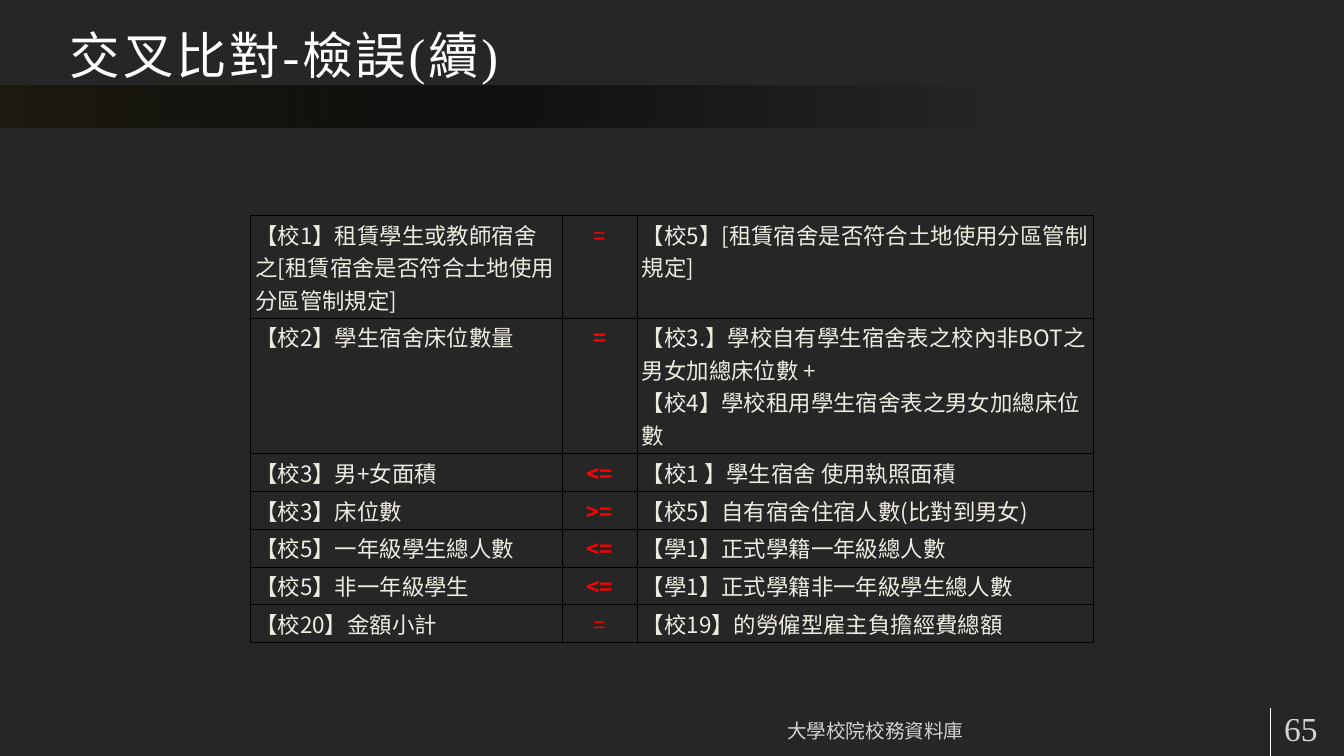
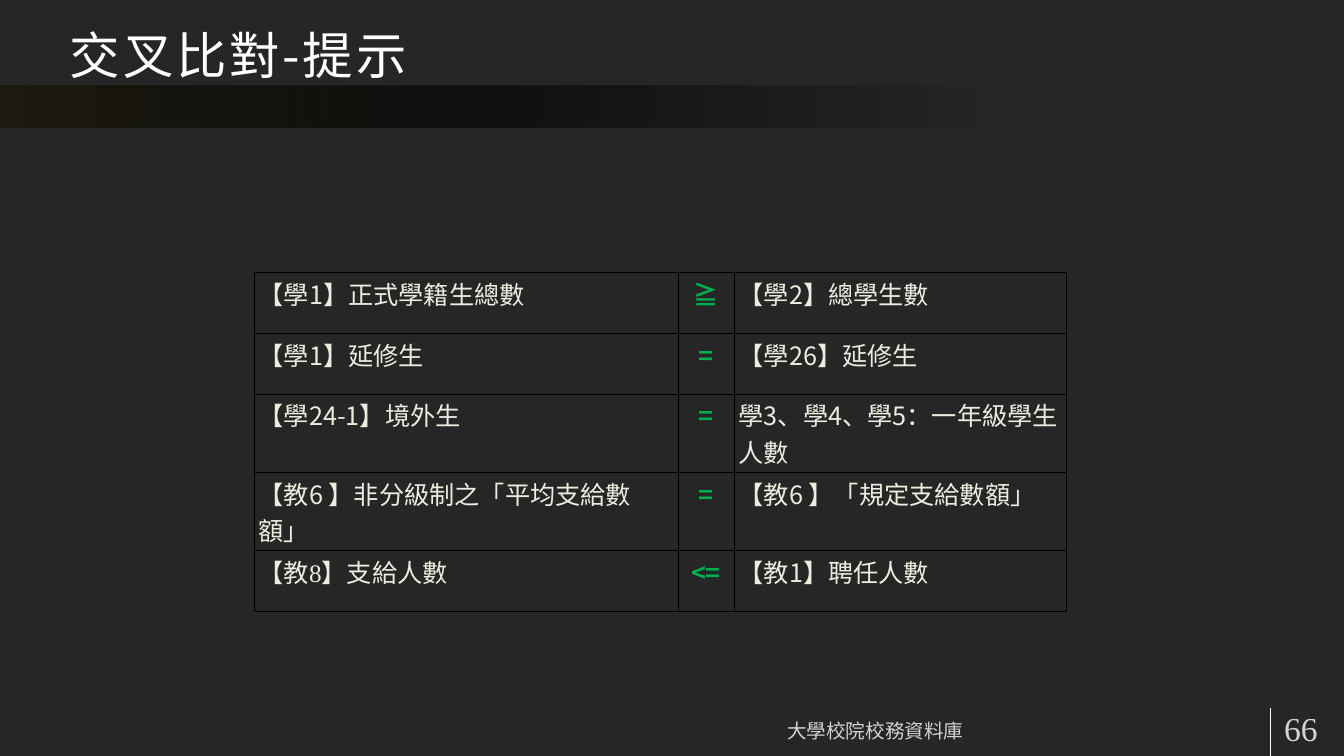
from dataclasses import dataclass

from lxml.etree import SubElement
from pptx import Presentation
from pptx.dml.color import RGBColor
from pptx.enum.shapes import MSO_CONNECTOR, MSO_SHAPE
from pptx.enum.text import MSO_ANCHOR, MSO_AUTO_SIZE, PP_ALIGN
from pptx.oxml import parse_xml
from pptx.oxml.ns import nsdecls, qn
from pptx.util import Cm, Pt


@dataclass(frozen=True)
class Theme:
    background: str = "262626"
    white: str = "FFFFFF"
    cell_text: str = "EEECE1"
    border: str = "000000"
    error: str = "FF0000"
    hint: str = "00B050"
    # Position, colour and opacity, all in percent
    band_stops: tuple = ((0, "1E1C11", 100), (39, "000000", 54), (74, "000000", 0))
    muted_opacity: int = 80
    serif: str = "Times New Roman"
    sans: str = "Noto Sans CJK SC"
    title_size: int = 54
    footer_size: int = 21
    number_size: int = 36
    error_size: int = 24
    hint_size: int = 27
    line_width: float = 0.75


FOOTER = "大學校院校務資料庫"
FIRST_NUMBER = 65

ERROR_ROWS = [
    ("【校1】租賃學生或教師宿舍之[租賃宿舍是否符合土地使用分區管制規定]", "=",
     "【校5】[租賃宿舍是否符合土地使用分區管制規定]"),
    ("【校2】學生宿舍床位數量", "=",
     "【校3.】學校自有學生宿舍表之校內非BOT之男女加總床位數 +\n"
     "【校4】學校租用學生宿舍表之男女加總床位數"),
    ("【校3】男+女面積", "<=", "【校1 】學生宿舍 使用執照面積"),
    ("【校3】床位數", ">=", "【校5】自有宿舍住宿人數(比對到男女)"),
    ("【校5】一年級學生總人數", "<=", "【學1】正式學籍一年級總人數"),
    ("【校5】非一年級學生", "<=", "【學1】正式學籍非一年級學生總人數"),
    ("【校20】金額小計", "=", "【校19】的勞僱型雇主負擔經費總額"),
]

HINT_ROWS = [
    ("【學1】正式學籍生總數", "≧", "【學2】總學生數"),
    ("【學1】延修生", "=", "【學26】延修生"),
    ("【學24-1】境外生", "=", "學3、學4、學5：一年級學生人數"),
    ("【教6 】非分級制之「平均支給數額」", "=", "【教6 】「規定支給數額」"),
    ("【教8】支給人數", "<=", "【教1】聘任人數"),
]


def write_text(text_frame, text, *, size, font, color, bold=False, opacity=100,
               spacing=0, align=PP_ALIGN.LEFT):
    for index, line in enumerate(text.split("\n")):
        paragraph = text_frame.add_paragraph() if index else text_frame.paragraphs[0]
        paragraph.alignment = align
        run = paragraph.add_run()
        run.text = line
        run.font.size = Pt(size)
        run.font.bold = bold
        run.font.color.rgb = RGBColor.from_string(color)
        run.font.name = font
        properties = run.font._element
        SubElement(properties, qn("a:ea")).set("typeface", Theme.sans)
        if spacing:
            properties.set("spc", str(spacing * 100))
        if opacity < 100:
            color_element = properties.find(".//" + qn("a:srgbClr"))
            SubElement(color_element, qn("a:alpha")).set("val", str(opacity * 1000))


def set_frame(text_frame, anchor):
    text_frame.word_wrap = True
    text_frame.auto_size = MSO_AUTO_SIZE.NONE
    text_frame.vertical_anchor = anchor
    text_frame.margin_left = text_frame.margin_right = Cm(0.46)
    text_frame.margin_top = text_frame.margin_bottom = Cm(0.23)


class Deck:
    def __init__(self, theme):
        self.theme = theme
        self.presentation = Presentation()
        self.presentation.slide_width = Cm(50.8)
        self.presentation.slide_height = Cm(28.58)
        self.slide = None

    def add_slide(self, title, title_font):
        presentation = self.presentation
        self.slide = presentation.slides.add_slide(presentation.slide_layouts[5])
        if len(presentation.slides) == 1:
            self.style_master()
        self.add_title(title, title_font)
        self.add_footer(FIRST_NUMBER + len(presentation.slides) - 1)

    def style_master(self):
        """Set the background, band and footer rule that every slide inherits."""
        master = self.presentation.slide_master
        fill = master.background.fill
        fill.solid()
        fill.fore_color.rgb = RGBColor.from_string(self.theme.background)
        for shape in (self.add_band(), self.add_rule()):
            master.shapes._spTree.append(shape._element)

    def add_band(self):
        band = self.slide.shapes.add_shape(
            MSO_SHAPE.RECTANGLE, Cm(0), Cm(3.23), Cm(50.8), Cm(1.6))
        band.shadow.inherit = False
        band.line.fill.background()
        stops = "".join(
            f'<a:gs pos="{position * 1000}"><a:srgbClr val="{color}">'
            f'<a:alpha val="{opacity * 1000}"/></a:srgbClr></a:gs>'
            for position, color, opacity in self.theme.band_stops)
        geometry = band._element.spPr.find(qn("a:prstGeom"))
        geometry.addnext(parse_xml(
            f'<a:gradFill {nsdecls("a")} rotWithShape="1"><a:gsLst>{stops}</a:gsLst>'
            '<a:lin ang="0" scaled="0"/></a:gradFill>'))
        return band

    def add_rule(self):
        rule = self.slide.shapes.add_connector(
            MSO_CONNECTOR.STRAIGHT, Cm(48.01), Cm(26.77), Cm(48.01), Cm(28.58))
        rule.line.color.rgb = RGBColor.from_string(self.theme.white)
        rule.line.width = Pt(self.theme.line_width)
        SubElement(rule._element.spPr, qn("a:effectLst"))
        return rule

    def add_title(self, text, font):
        title = self.slide.shapes.title
        title.left, title.top = Cm(2.18), Cm(0)
        title.width, title.height = Cm(45.72), Cm(3.43)
        set_frame(title.text_frame, MSO_ANCHOR.BOTTOM)
        write_text(title.text_frame, text, size=self.theme.title_size, font=font,
                   color=self.theme.white, spacing=3)

    def add_text(self, text, left, width, anchor, **text_format):
        box = self.slide.shapes.add_textbox(Cm(left), Cm(26.77), Cm(width), Cm(1.52))
        set_frame(box.text_frame, anchor)
        write_text(box.text_frame, text, font=self.theme.serif, color=self.theme.white,
                   opacity=self.theme.muted_opacity, **text_format)

    def add_footer(self, number):
        self.add_text(FOOTER, 18.19, 29.79, MSO_ANCHOR.BOTTOM,
                      size=self.theme.footer_size, align=PP_ALIGN.CENTER)
        self.add_text(str(number), 48.08, 2.92, MSO_ANCHOR.MIDDLE,
                      size=self.theme.number_size)

    def add_comparison(self, rows, left, top, widths, heights, size, sign_color,
                       plain_signs=(), serif_cells=()):
        """Add a table of left side, comparison sign and right side."""
        frame = self.slide.shapes.add_table(
            len(rows), len(widths), Cm(left), Cm(top), Cm(sum(widths)), Cm(sum(heights)))
        table = frame.table
        table.first_row = table.horz_banding = False
        for column, width in zip(table.columns, widths):
            column.width = Cm(width)
        for row, height in zip(table.rows, heights):
            row.height = Cm(height)
        for row_index, texts in enumerate(rows):
            for column_index, text in enumerate(texts):
                is_sign = column_index == 1
                is_serif = (row_index, column_index) in serif_cells
                cell = table.cell(row_index, column_index)
                self.style_cell(cell)
                write_text(
                    cell.text_frame, text, size=size,
                    font=self.theme.serif if is_serif else self.theme.sans,
                    color=sign_color if is_sign else self.theme.cell_text,
                    bold=is_sign and row_index not in plain_signs,
                    align=PP_ALIGN.CENTER if is_sign else PP_ALIGN.LEFT)

    def style_cell(self, cell):
        cell.margin_left = cell.margin_right = Cm(0.18)
        cell.margin_top = cell.margin_bottom = Cm(0.1)
        cell.fill.background()
        properties = cell._tc.get_or_add_tcPr()
        for index, side in enumerate(("lnL", "lnR", "lnT", "lnB")):
            properties.insert(index, parse_xml(
                f'<a:{side} {nsdecls("a")} w="{Pt(self.theme.line_width)}"><a:solidFill>'
                f'<a:srgbClr val="{self.theme.border}"/></a:solidFill></a:{side}>'))


def main():
    theme = Theme()
    deck = Deck(theme)

    deck.add_slide("交叉比對-檢誤(續)", theme.serif)
    deck.add_comparison(
        ERROR_ROWS, 9.47, 8.15, widths=(11.79, 2.82, 17.25),
        heights=[3.23, 4.27] + [1.19] * 5, size=theme.error_size,
        sign_color=theme.error, plain_signs=(0, 6))

    deck.add_slide("交叉比對-提示", theme.sans)
    deck.add_comparison(
        HINT_ROWS, 9.6, 10.31, widths=(16.03, 2.11, 12.57),
        heights=[2.29, 2.29, 2.46, 2.29, 2.29], size=theme.hint_size,
        sign_color=theme.hint, serif_cells=[(4, 0)])

    deck.presentation.save("out.pptx")


if __name__ == "__main__":
    main()
